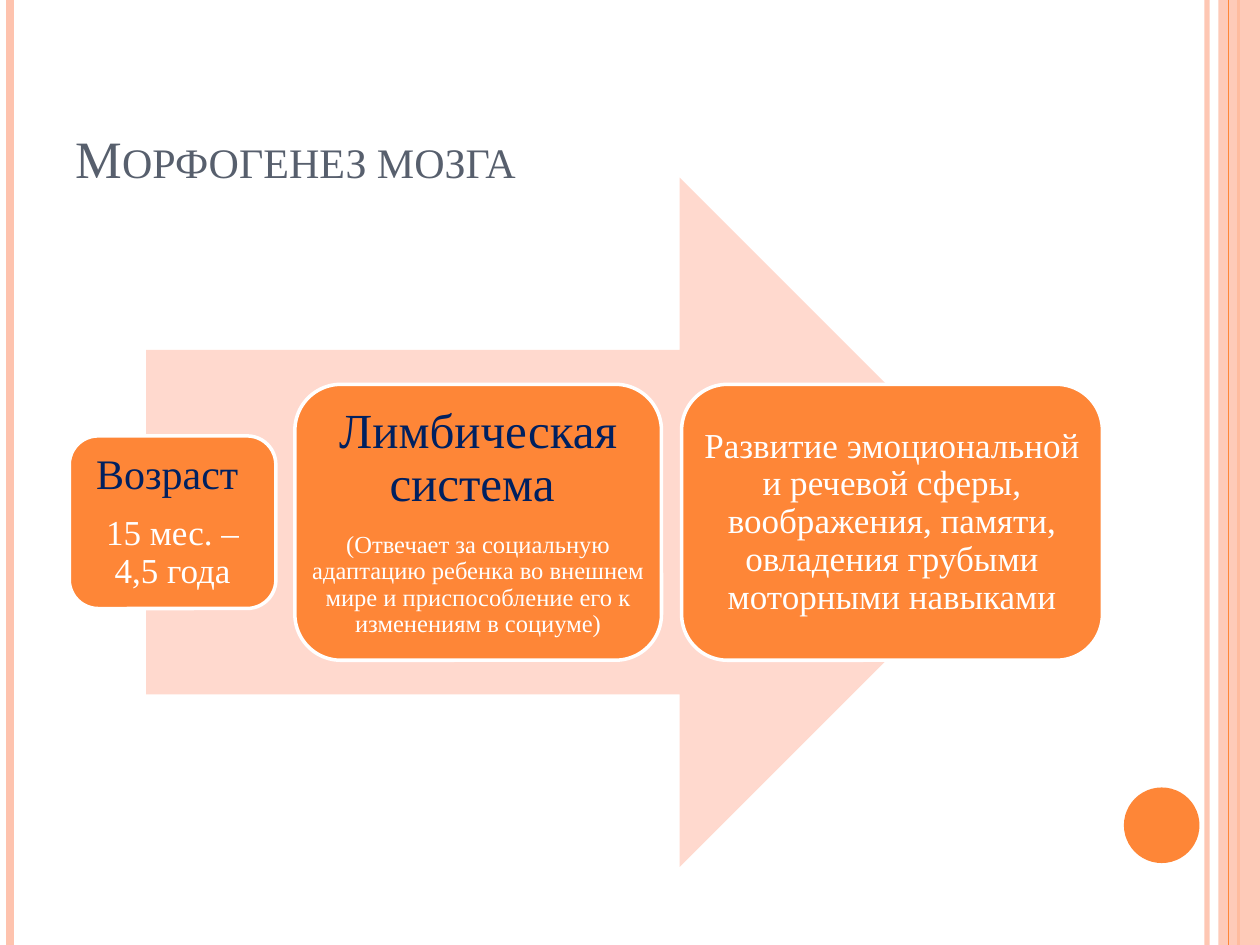
from dataclasses import dataclass

from lxml.etree import SubElement
from pptx import Presentation
from pptx.dml.color import RGBColor
from pptx.enum.shapes import MSO_CONNECTOR as Connector, MSO_SHAPE as Preset
from pptx.enum.text import MSO_ANCHOR as Anchor, PP_ALIGN as Align
from pptx.oxml.ns import qn
from pptx.util import Inches, Pt


@dataclass(frozen=True)
class Theme:
    font: str = "Times New Roman"
    orange: str = "FE8637"
    peach: str = "FEC3AE"
    pale: str = "FFD9CE"
    white: str = "FFFFFF"
    navy: str = "002060"
    slate: str = "575F6D"
    title: int = 30
    system: int = 28
    heading: int = 24
    body: int = 20
    note: int = 14


THEME = Theme()


@dataclass(frozen=True)
class Area:
    left: float
    top: float
    width: float
    height: float

    def lengths(self) -> list:
        return [Inches(value) for value in (self.left, self.top, self.width, self.height)]


@dataclass(frozen=True)
class Stripe:
    x: float
    color: str
    weight: float
    opacity: int = 100


@dataclass(frozen=True)
class Span:
    text: str
    size: int
    color: str


@dataclass(frozen=True)
class Stage:
    area: Area
    inset: float
    spans: tuple


BACK_STRIPES = (
    Stripe(9.58, THEME.peach, 3, 93),
    Stripe(0.08, THEME.peach, 4.5),
    Stripe(9.83, THEME.orange, 1.5),
)
FRONT_STRIPE = Stripe(9.75, THEME.orange, 0.75)
STAGES = (
    Stage(Area(0.55, 3.46, 1.64, 1.37), 0.03, (
        Span("Возраст ", THEME.heading, THEME.navy),
        Span("15 мес. – 4,5 года", THEME.body, THEME.white),
    )),
    Stage(Area(2.34, 3.05, 2.91, 2.19), 0.01, (
        Span("Лимбическая система ", THEME.system, THEME.navy),
        Span("(Отвечает за социальную адаптацию ребенка во внешнем мире "
             "и приспособление его к изменениям в социуме)", THEME.note, THEME.white),
    )),
    Stage(Area(5.41, 3.05, 3.34, 2.19), 0, (
        Span("Развитие эмоциональной и речевой сферы, воображения, памяти, "
             "овладения грубыми моторными навыками", THEME.body, THEME.white),
    )),
)


def apply_format(target, values: dict) -> None:
    for name, value in values.items():
        setattr(target, name, value)


def paint(fill, color: str, opacity: int = 100) -> None:
    fill.solid()
    fill.fore_color.rgb = RGBColor.from_string(color)
    if opacity < 100:
        node = fill._xPr.find(qn("a:solidFill"))[0]
        SubElement(node, qn("a:alpha")).set("val", str(opacity * 1000))


def add_stripe(page, stripe: Stripe) -> None:
    x = Inches(stripe.x)
    line = page.shapes.add_connector(Connector.STRAIGHT, x, 0, x, Inches(7.5))
    line.line.width = Pt(stripe.weight)
    paint(line.line.fill, stripe.color, stripe.opacity)
    SubElement(line._element.spPr, qn("a:effectLst"))


def add_figure(page, preset: Preset, area: Area, color: str, opacity: int = 100):
    figure = page.shapes.add_shape(preset, *area.lengths())
    figure.shadow.inherit = False
    paint(figure.fill, color, opacity)
    figure.line.fill.background()
    return figure


def write_span(para, span: Span):
    run = para.add_run()
    run.text = span.text
    apply_format(run.font, {"name": THEME.font, "size": Pt(span.size)})
    run.font.color.rgb = RGBColor.from_string(span.color)
    return run


def add_title(page, area: Area, span: Span) -> None:
    box = page.shapes.add_textbox(*area.lengths())
    apply_format(box.text_frame, {"word_wrap": True, "vertical_anchor": Anchor.BOTTOM})
    run = write_span(box.text_frame.paragraphs[0], span)
    run.font._element.set("cap", "small")


def add_stage(page, stage: Stage) -> None:
    box = add_figure(page, Preset.ROUNDED_RECTANGLE, stage.area, THEME.orange)
    paint(box.line.fill, THEME.white)
    box.line.width = Pt(2)
    frame = box.text_frame
    apply_format(frame, {"word_wrap": True, "vertical_anchor": Anchor.MIDDLE})
    apply_format(frame, {f"margin_{side}": Inches(stage.inset)
                         for side in ("left", "top", "right", "bottom")})
    for index, span in enumerate(stage.spans):
        para = frame.add_paragraph() if index else frame.paragraphs[0]
        apply_format(para, {"alignment": Align.CENTER, "line_spacing": 0.9,
                            "space_after": Pt(round(span.size * 0.4, 1))})
        write_span(para, span)


def main() -> None:
    deck = Presentation()
    apply_format(deck, {"slide_width": Inches(10), "slide_height": Inches(7.5)})
    page = deck.slides.add_slide(deck.slide_layouts[6])
    for stripe in BACK_STRIPES:
        add_stripe(page, stripe)
    add_figure(page, Preset.RECTANGLE, Area(9.67, 0, 0.33, 7.5), THEME.peach, 87)
    add_stripe(page, FRONT_STRIPE)
    add_figure(page, Preset.OVAL, Area(8.92, 6.25, 0.6, 0.6), THEME.orange)
    add_title(page, Area(0.5, 0.3, 8.17, 1.25),
              Span("Морфогенез мозга", THEME.title, THEME.slate))
    add_figure(page, Preset.RIGHT_ARROW, Area(1.16, 1.41, 6.97, 5.47), THEME.pale)
    for stage in STAGES:
        add_stage(page, stage)
    deck.save("out.pptx")


if __name__ == "__main__":
    main()
